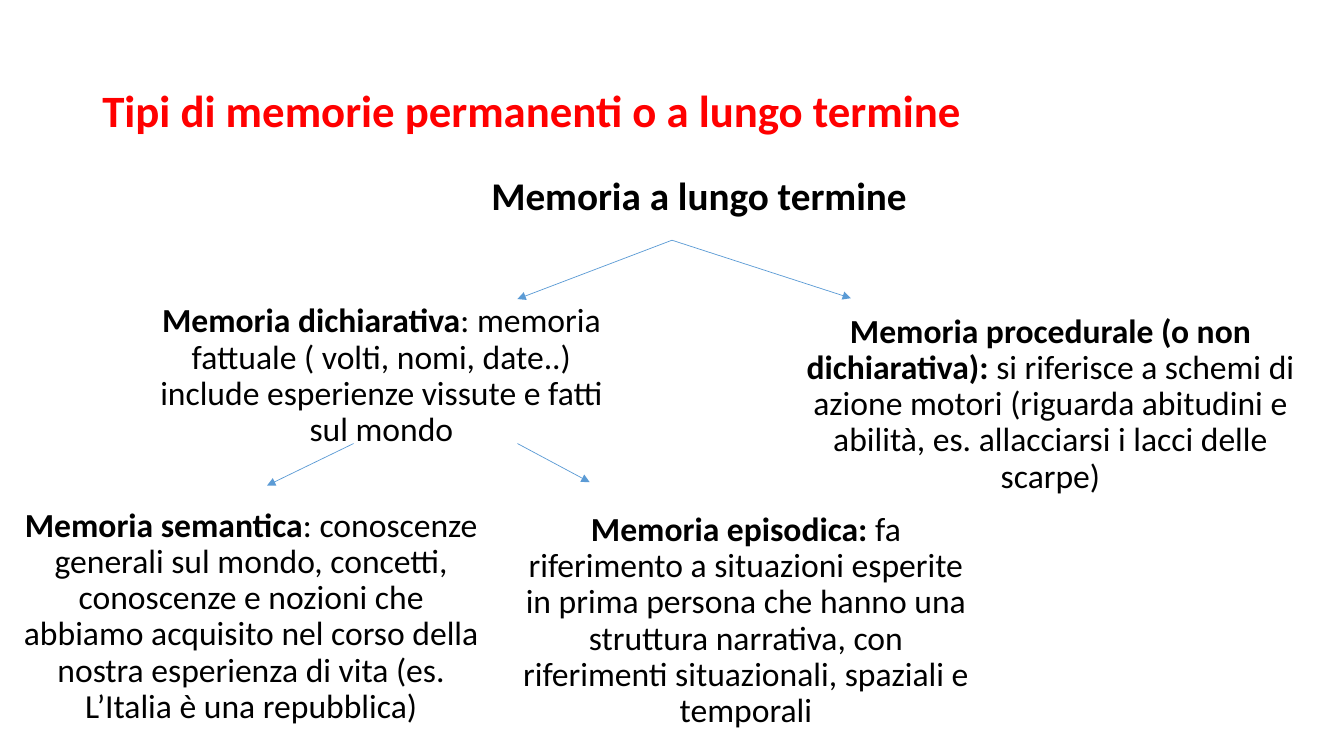
from dataclasses import dataclass

from lxml.etree import SubElement
from pptx import Presentation
from pptx.dml.color import RGBColor
from pptx.enum.shapes import MSO_CONNECTOR
from pptx.enum.text import MSO_ANCHOR, PP_ALIGN
from pptx.oxml.ns import qn
from pptx.slide import Slide
from pptx.util import Inches, Pt


@dataclass(frozen=True)
class Theme:
    font: str = "Calibri"
    title: str = "FF0000"
    ink: str = "000000"
    arrow: str = "5B9BD5"
    big: int = 32
    mid: int = 28
    body: int = 24
    line: float = 0.5


@dataclass(frozen=True)
class Node:
    left: float
    top: float
    wide: float
    high: float
    name: str
    text: str


@dataclass(frozen=True)
class Arrow:
    start: tuple[float, float]
    end: tuple[float, float]


THEME = Theme()
WIDE, HIGH = Inches(13.333), Inches(7.5)
COLS, ROWS = 160, 90
SPAN = 57.2  # columns of a usual node
PEAK = (80, 28.6)

NODES = [
    Node(16.8, 35.6, SPAN, 15.6, "Memoria dichiarativa",
         ": memoria fattuale ( volti, nomi, date..) include esperienze "
         "vissute e fatti sul mondo"),
    Node(91.8, 36.8, 66.5, 19, "Memoria procedurale (o non dichiarativa): ",
         "si riferisce a schemi di azione motori (riguarda abitudini e "
         "abilità, es. allacciarsi i lacci delle scarpe)"),
    Node(1.3, 59.9, SPAN, 28.1, "Memoria semantica",
         ": conoscenze generali sul mondo, concetti, conoscenze e nozioni che "
         "abbiamo acquisito nel corso della nostra esperienza di vita "
         "(es. L’Italia è una repubblica)"),
    Node(60.2, 60.4, SPAN, 23, "Memoria episodica: ",
         "fa riferimento a situazioni esperite in prima persona che hanno una "
         "struttura narrativa, con riferimenti situazionali, spaziali e "
         "temporali"),
]
ARROWS = [
    Arrow(PEAK, (61.6, 35.6)),
    Arrow(PEAK, (101.3, 35.5)),
    Arrow((42.1, 52.8), (31.8, 57.8)),
    Arrow((61.6, 52.8), (70.2, 57.4)),
]


def col(n: float) -> int:
    return round(WIDE * n / COLS)


def row(n: float) -> int:
    return round(HIGH * n / ROWS)


def write(slide: Slide, node: Node, *, size: int = THEME.body,
          color: str = THEME.ink, align: PP_ALIGN = PP_ALIGN.CENTER,
          anchor: MSO_ANCHOR = MSO_ANCHOR.TOP) -> None:
    """Add a text box with the node's name in bold and its text in regular."""
    box = slide.shapes.add_textbox(col(node.left), row(node.top),
                                   col(node.wide), row(node.high))
    frame = box.text_frame
    frame.word_wrap = True
    frame.vertical_anchor = anchor
    para = frame.paragraphs[0]
    para.alignment = align
    para.line_spacing = 0.9
    for part, bold in ((node.name, True), (node.text, False)):
        if part:
            run = para.add_run()
            run.text = part
            run.font.name = THEME.font
            run.font.size = Pt(size)
            run.font.bold = bold
            run.font.color.rgb = RGBColor.from_string(color)


def point(slide: Slide, arrow: Arrow) -> None:
    """Add a thin line with an arrowhead at its end."""
    (x, y), (u, v) = arrow.start, arrow.end
    link = slide.shapes.add_connector(MSO_CONNECTOR.STRAIGHT,
                                      col(x), row(y), col(u), row(v))
    link.line.width = Pt(THEME.line)
    link.line.color.rgb = RGBColor.from_string(THEME.arrow)
    SubElement(link.line._get_or_add_ln(), qn("a:tailEnd"), type="triangle")
    SubElement(link._element.spPr, qn("a:effectLst"))


def main() -> None:
    deck = Presentation()
    deck.slide_width, deck.slide_height = WIDE, HIGH
    slide = deck.slides.add_slide(deck.slide_layouts[6])
    write(slide, Node(11, 4.7, 138, 17.4,
                      "Tipi di memorie permanenti o a lungo termine", ""),
          size=THEME.big, color=THEME.title, align=PP_ALIGN.LEFT,
          anchor=MSO_ANCHOR.MIDDLE)
    write(slide, Node(54.6, 20.4, SPAN, 6.4, "Memoria a lungo termine", ""),
          size=THEME.mid)
    for node in NODES:
        write(slide, node)
    for arrow in ARROWS:
        point(slide, arrow)
    deck.save("out.pptx")


if __name__ == "__main__":
    main()
